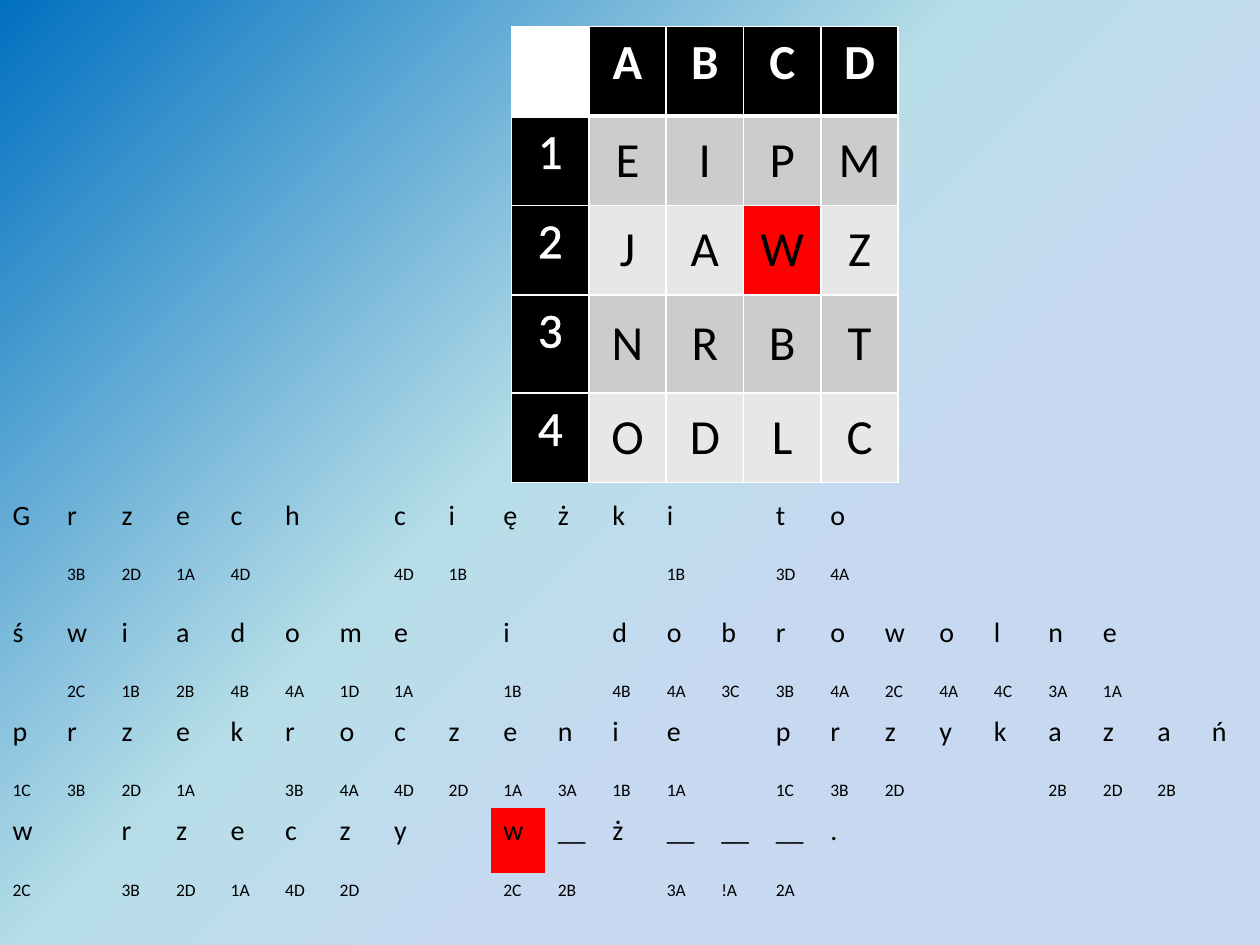
import copy
from dataclasses import dataclass
from typing import Optional

import lxml.etree
import pptx
import pptx.dml.color
import pptx.enum.text
import pptx.oxml.ns
import pptx.util

RGBColor = pptx.dml.color.RGBColor
Inches = pptx.util.Inches
Pt = pptx.util.Pt
qn = pptx.oxml.ns.qn

BLACK = RGBColor(0x00, 0x00, 0x00)
WHITE = RGBColor(0xFF, 0xFF, 0xFF)
RED = RGBColor(0xFF, 0x00, 0x00)
DARK_BAND = RGBColor(0xCC, 0xCC, 0xCC)
LIGHT_BAND = RGBColor(0xE7, 0xE7, 0xE7)
SKY = RGBColor(0xC6, 0xD9, 0xF1)
BACKGROUND_STOPS = [
    (0, RGBColor(0x00, 0x70, 0xC0)),
    (0.44, RGBColor(0xB7, 0xDE, 0xE8)),
    (0.64, SKY),
    (1, SKY),
]
NO_STYLE = "{2D5ABB26-0587-4C30-8999-92F81FD0307C}"
FONT = "Calibri"

MESSAGE_COLUMNS = 23
LETTER_SIZE, CODE_SIZE = 16, 10
KEY_LETTERS = ["EIPM", "JAWZ", "NRBT", "ODLC"]


@dataclass
class MessageLine:
    letters: str             # "_" is a letter to guess
    codes: str               # "-" is a letter without a code
    blank_code_size: int = CODE_SIZE
    red_column: Optional[int] = None


MESSAGE = [
    MessageLine("Grzech ciężki to",
                "- 3B 2D 1A 4D - - 4D 1B - - - 1B - 3D 4A", blank_code_size=18),
    MessageLine("świadome i dobrowolne",
                "- 2C 1B 2B 4B 4A 1D 1A - 1B - 4B 4A 3C 3B 4A 2C 4A 4C 3A 1A"),
    MessageLine("przekroczenie przykazań",
                "1C 3B 2D 1A - 3B 4A 4D 2D 1A 3A 1B 1A - 1C 3B 2D - - 2B 2D 2B"),
    MessageLine("w rzeczy w_ż___.",
                "2C - 3B 2D 1A 4D 2D - - 2C 2B - 3A !A 2A", red_column=9),
]


def add_plain_table(slide, left: float, top: float, widths: list, heights: list):
    """Add a table without style; lengths are in inches."""
    frame = slide.shapes.add_table(
        len(heights), len(widths), Inches(left), Inches(top),
        Inches(sum(widths)), Inches(sum(heights)))
    table = frame.table
    table.first_row = table.horz_banding = False
    frame.element.find(".//" + qn("a:tableStyleId")).text = NO_STYLE
    for column, width in zip(table.columns, widths):
        column.width = Inches(width)
    for row, height in zip(table.rows, heights):
        row.height = Inches(height)
    return table


def write_cell(cell, text: str, size: int, color=BLACK, fill=None, bold=False):
    """Fill a cell and write its text; an empty cell keeps the line size."""
    if fill is None:
        cell.fill.background()
    else:
        cell.fill.solid()
        cell.fill.fore_color.rgb = fill
    paragraph = cell.text_frame.paragraphs[0]
    if not text:
        lxml.etree.SubElement(paragraph._p, qn("a:endParaRPr"), sz=str(size * 100))
        return None
    run = paragraph.add_run()
    run.text = text
    run.font.color.rgb = color
    for name, value in {"name": FONT, "size": Pt(size), "bold": bold}.items():
        setattr(run.font, name, value)
    return run


def add_white_line(parent, tag: str, points: float, index: int) -> None:
    line = parent.makeelement(qn(tag), {"w": str(Pt(points))})
    solid = lxml.etree.SubElement(line, qn("a:solidFill"))
    lxml.etree.SubElement(solid, qn("a:srgbClr"), val=str(WHITE))
    parent.insert(index, line)


def paint_background(slide) -> None:
    fill = slide.background.fill
    fill.gradient()
    fill.gradient_angle = 315
    stop_list = slide.element.find(".//" + qn("a:gsLst"))
    while len(stop_list) < len(BACKGROUND_STOPS):
        stop_list.append(copy.deepcopy(stop_list[0]))
    for stop, (position, color) in zip(fill.gradient_stops, BACKGROUND_STOPS):
        stop.position = position
        stop.color.rgb = color


def add_message(slide) -> None:
    table = add_plain_table(slide, 0, 3.91, [9.96 / MESSAGE_COLUMNS] * MESSAGE_COLUMNS,
                            [0.52, 0.24] * len(MESSAGE))
    for index, line in enumerate(MESSAGE):
        letters = line.letters.ljust(MESSAGE_COLUMNS)
        codes = line.codes.split()
        codes += ["-"] * (MESSAGE_COLUMNS - len(codes))
        for column, (letter, code) in enumerate(zip(letters, codes)):
            write_cell(table.cell(2 * index, column), letter.strip().replace("_", "__"),
                       LETTER_SIZE, fill=RED if column == line.red_column else None)
            blank = code == "-"
            write_cell(table.cell(2 * index + 1, column), "" if blank else code,
                       line.blank_code_size if blank else CODE_SIZE)


def add_key(slide) -> None:
    rows = [" ABCD"] + [f"{number}{letters}" for number, letters in enumerate(KEY_LETTERS, 1)]
    table = add_plain_table(slide, 4.06, 0.21, [3.07 / 5] * 5,
                            [0.71, 0.71, 0.71, 0.78, 0.71])
    for row, texts in enumerate(rows):
        for column, text in enumerate(texts):
            cell = table.cell(row, column)
            properties = cell._tc.get_or_add_tcPr()
            borders = {"a:lnL": 1, "a:lnR": 1, "a:lnT": 3 if row == 1 else 1,
                       "a:lnB": 3 if row == 0 else 1}
            for index, (tag, points) in enumerate(borders.items()):
                add_white_line(properties, tag, points, index)

            # Headings are white on black, the corner is white
            heading = row == 0 or column == 0
            if heading:
                fill = BLACK if text.strip() else WHITE
            elif text == "W":
                fill = RED
            else:
                fill = DARK_BAND if row % 2 else LIGHT_BAND
            run = write_cell(cell, text.strip(), 28, WHITE if heading else BLACK,
                             fill, bold=row == 0)
            cell.text_frame.paragraphs[0].alignment = pptx.enum.text.PP_ALIGN.CENTER
            if not heading:
                cell.vertical_anchor = pptx.enum.text.MSO_ANCHOR.MIDDLE
            elif row > 0:
                add_white_line(run.font._element, "a:ln", 0.75, 0)


def main() -> None:
    presentation = pptx.Presentation()
    presentation.slide_width = Inches(10)
    presentation.slide_height = Inches(7.5)
    slide = presentation.slides.add_slide(presentation.slide_layouts[6])
    paint_background(slide)
    add_message(slide)
    add_key(slide)
    presentation.save("out.pptx")


if __name__ == "__main__":
    main()
